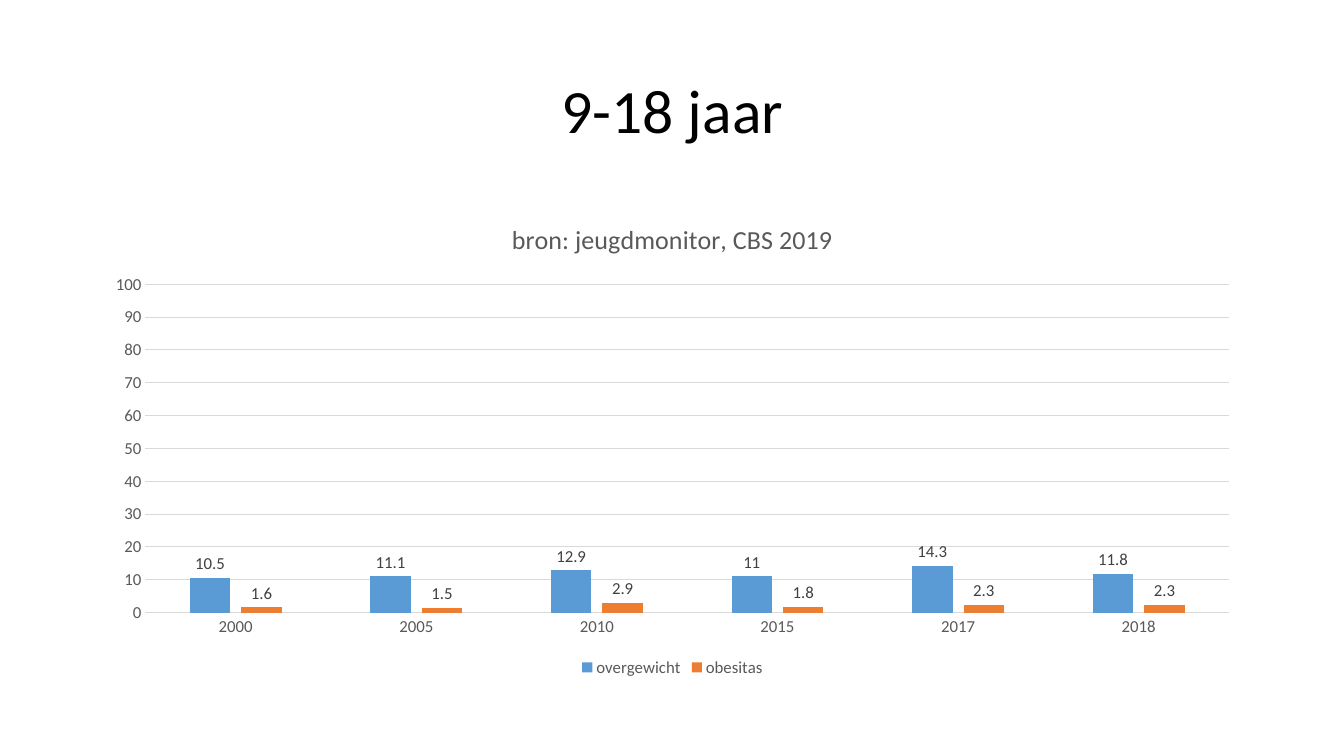
from dataclasses import dataclass

from pptx import Presentation
from pptx import util as u
from pptx.chart.data import CategoryChartData
from pptx.dml.color import RGBColor
from pptx.enum import chart as ch, text

WIDTH, HEIGHT = u.Inches(13.33), u.Inches(7.5)
FONT = "Calibri"
GREY, LIGHT = "595959", "D9D9D9"
YEARS = ["2000", "2005", "2010", "2015", "2017", "2018"]


@dataclass
class Series:
    name: str
    values: list[float]
    color: str


@dataclass
class Box:
    """Place on the slide, as shares of its width and height."""
    left: float
    top: float
    width: float
    height: float

    def emu(self) -> tuple[int, int, int, int]:
        return (int(self.left * WIDTH), int(self.top * HEIGHT),
                int(self.width * WIDTH), int(self.height * HEIGHT))


SERIES = [
    Series("overgewicht", [10.5, 11.1, 12.9, 11, 14.3, 11.8], "5B9BD5"),
    Series("obesitas", [1.6, 1.5, 2.9, 1.8, 2.3, 2.3], "ED7D31"),
]
TITLE_BOX = Box(0.069, 0.0533, 0.8627, 0.1933)
CHART_BOX = Box(0.069, 0.2667, 0.8627, 0.6347)


def rgb(color: str) -> RGBColor:
    return RGBColor.from_string(color)


def style_font(font, size: float, color: str) -> None:
    font.name, font.size, font.bold = FONT, u.Pt(size), False
    font.color.rgb = rgb(color)


def style_line(line) -> None:
    line.color.rgb = rgb(LIGHT)
    line.width = u.Pt(0.75)


def add_centred_run(tf, words: str, size: float, color: str) -> None:
    p = tf.paragraphs[0]
    p.alignment = text.PP_ALIGN.CENTER
    r = p.add_run()
    r.text = words
    style_font(r.font, size, color)


def add_title(s, words: str) -> None:
    sp = s.shapes.title
    sp.left, sp.top, sp.width, sp.height = TITLE_BOX.emu()
    tf = sp.text_frame
    tf.vertical_anchor = text.MSO_ANCHOR.MIDDLE
    tf.paragraphs[0].line_spacing = 0.9
    add_centred_run(tf, words, 44, "000000")


def style_axes(chart) -> None:
    years, percent = chart.category_axis, chart.value_axis
    for axis in (years, percent):
        axis.major_tick_mark = axis.minor_tick_mark = ch.XL_TICK_MARK.NONE
        style_font(axis.tick_labels.font, 12, GREY)
    style_line(years.format.line)
    percent.format.line.fill.background()
    percent.minimum_scale, percent.maximum_scale = 0, 100
    percent.major_unit = 10
    style_line(percent.major_gridlines.format.line)


def style_series(plot) -> None:
    plot.gap_width, plot.overlap = 219, -27
    plot.vary_by_categories = False
    for bars, item in zip(plot.series, SERIES):
        bars.format.fill.solid()
        bars.format.fill.fore_color.rgb = rgb(item.color)
        labels = bars.data_labels
        labels.show_value = True
        labels.position = ch.XL_LABEL_POSITION.OUTSIDE_END
        style_font(labels.font, 12, "404040")


def add_weight_chart(s, heading: str) -> None:
    data = CategoryChartData()
    data.categories = YEARS
    for item in SERIES:
        data.add_series(item.name, item.values)
    chart = s.shapes.add_chart(
        ch.XL_CHART_TYPE.COLUMN_CLUSTERED, *CHART_BOX.emu(), data).chart
    style_font(chart.font, 10, "000000")
    add_centred_run(chart.chart_title.text_frame, heading, 18.6, GREY)
    chart.chart_title.include_in_layout = False
    chart.has_legend = True
    chart.legend.position = ch.XL_LEGEND_POSITION.BOTTOM
    chart.legend.include_in_layout = False
    style_font(chart.legend.font, 12, GREY)
    style_axes(chart)
    style_series(chart.plots[0])


def main() -> None:
    prs = Presentation()
    prs.slide_width, prs.slide_height = WIDTH, HEIGHT
    s = prs.slides.add_slide(prs.slide_layouts[5])
    add_title(s, "9-18 jaar")
    add_weight_chart(s, "bron: jeugdmonitor, CBS 2019")
    prs.save("out.pptx")


if __name__ == "__main__":
    main()
